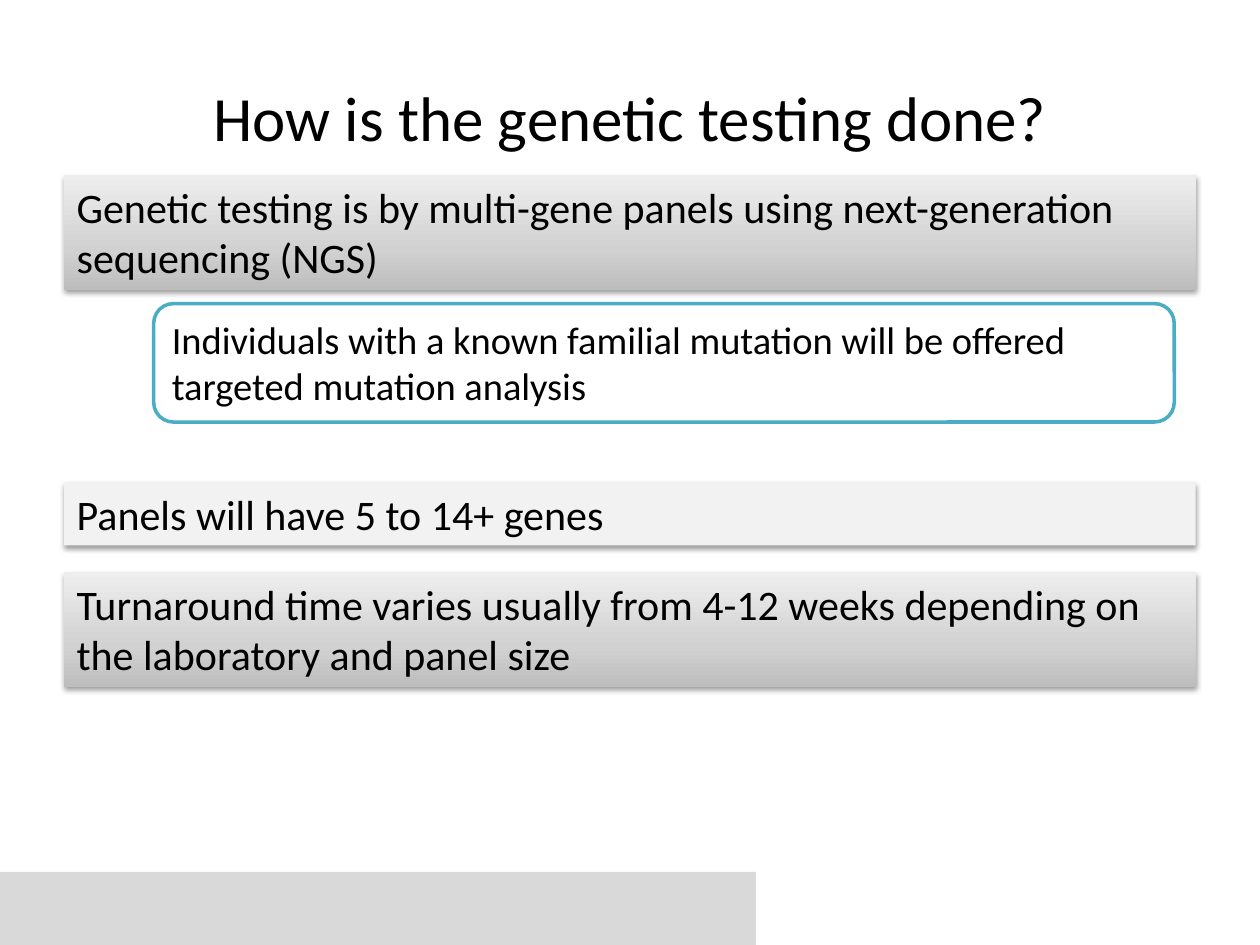
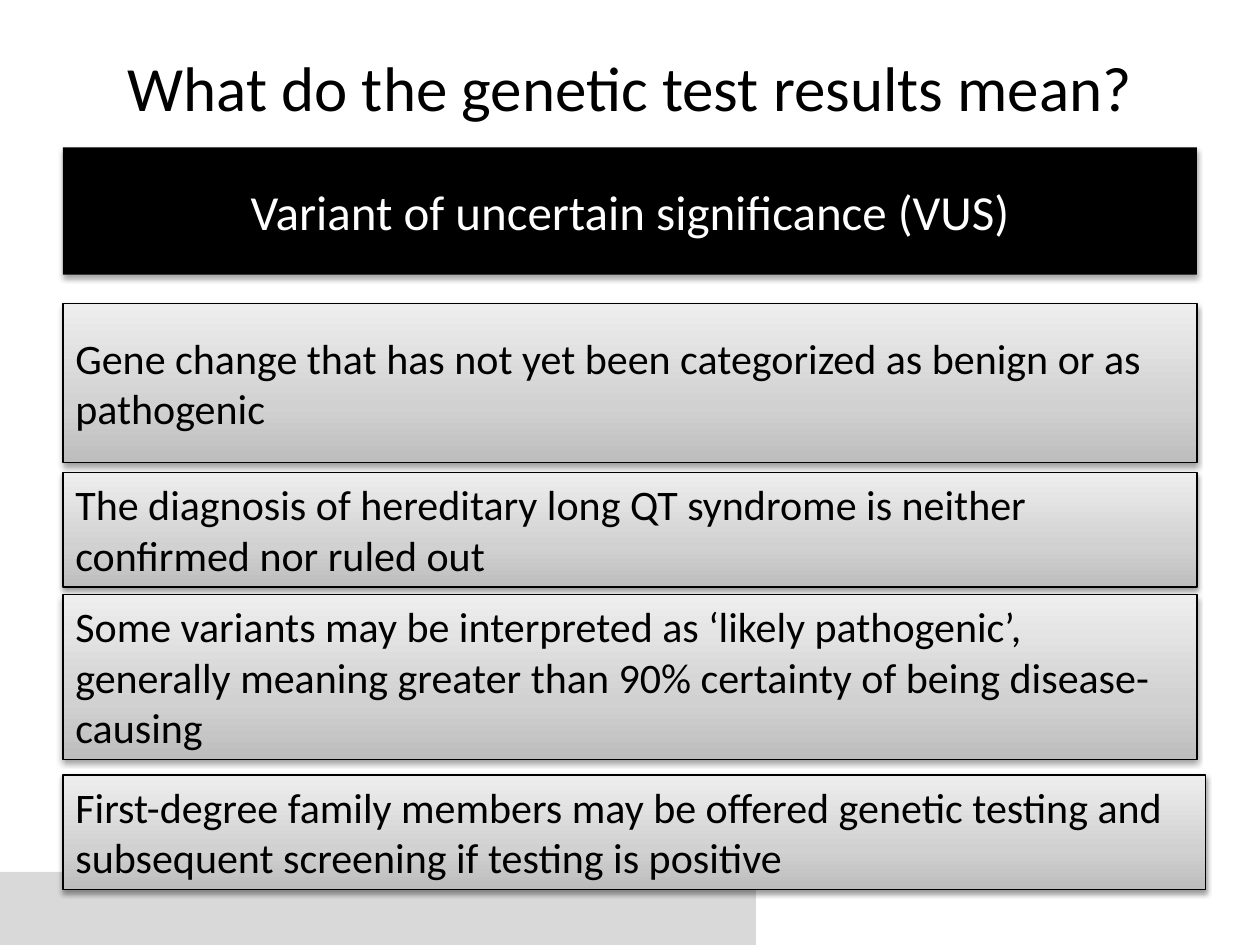
from copy import deepcopy
from dataclasses import dataclass
from typing import NamedTuple, Optional

from lxml import etree
from pptx import Presentation
from pptx import util as u
from pptx.dml.color import RGBColor
from pptx.enum import shapes, text
from pptx.oxml import ns

WIDE, HIGH = u.Inches(10), u.Inches(7.5)
COLS, ROWS = 20, 30


@dataclass(frozen=True)
class Theme:
    font: str = "Calibri"
    black: str = "000000"
    white: str = "FFFFFF"
    band: str = "D9D9D9"
    pale: str = "F2F2F2"
    teal: str = "4BACC6"
    fade: tuple = ((0, "BDBDBD"), (0.35, "D1D1D1"), (1, "EEEEEE"))
    title: int = 36
    head: int = 28
    body: int = 24
    note: int = 22


T = Theme()


class Area(NamedTuple):
    """Left, top, width and height in grid columns and rows."""
    col: float
    row: float
    cols: float
    rows: float

    def place(self) -> tuple:
        x, y = WIDE / COLS, HIGH / ROWS
        return tuple(round(n) for n in
                     (self.col * x, self.row * y, self.cols * x, self.rows * y))


class Shade(NamedTuple):
    alpha: int
    blur: float
    drop: float


SOFT = Shade(38, 3.1, 1.6)
DEEP = Shade(35, 3.1, 1.8)


@dataclass(frozen=True)
class Panel:
    area: Area
    words: str = ""
    fill: Optional[str] = None  # None gives the grey fade
    line: Optional[str] = None
    weight: float = 0.75
    size: int = T.body
    ink: str = T.black
    shade: Optional[Shade] = SOFT
    mid: bool = False
    center: bool = False
    round: bool = False


class Page(NamedTuple):
    title: str
    row: float
    panels: list


BAND = Panel(Area(0, 27.68, 12, 2.32), fill=T.band, shade=None)


def rgb(code: str) -> RGBColor:
    return RGBColor.from_string(code)


def fade(shape) -> None:
    fill = shape.fill
    fill.gradient()
    fill.gradient_angle = 90
    stops = shape._element.spPr.find(".//" + ns.qn("a:gsLst"))
    stops.append(deepcopy(stops[-1]))
    for stop, (spot, code) in zip(fill.gradient_stops, T.fade):
        stop.position = spot
        stop.color.rgb = rgb(code)


def cast(shape, shade: Shade) -> None:
    """Put an outer shadow straight below the shape."""
    effects = shape._element.spPr.find(ns.qn("a:effectLst"))
    outer = etree.SubElement(
        effects, ns.qn("a:outerShdw"), blurRad=str(u.Pt(shade.blur)),
        dist=str(u.Pt(shade.drop)), dir="5400000", rotWithShape="0")
    color = etree.SubElement(outer, ns.qn("a:srgbClr"), val=T.black)
    etree.SubElement(color, ns.qn("a:alpha"), val=str(shade.alpha * 1000))


def write(shape, words: str, size: int, ink: str, mid: bool, center: bool) -> None:
    frame = shape.text_frame
    frame.word_wrap = True
    frame.vertical_anchor = text.MSO_ANCHOR.MIDDLE if mid else text.MSO_ANCHOR.TOP
    frame.auto_size = (text.MSO_AUTO_SIZE.NONE if mid
                       else text.MSO_AUTO_SIZE.SHAPE_TO_FIT_TEXT)
    para = frame.paragraphs[0]
    para.alignment = text.PP_ALIGN.CENTER if center else text.PP_ALIGN.LEFT
    run = para.add_run()
    run.text = words
    run.font.name, run.font.size = T.font, u.Pt(size)
    run.font.color.rgb = rgb(ink)


def draw(slide, panel: Panel) -> None:
    kinds = shapes.MSO_SHAPE
    kind = kinds.ROUNDED_RECTANGLE if panel.round else kinds.RECTANGLE
    shape = slide.shapes.add_shape(kind, *panel.area.place())
    if panel.fill:
        shape.fill.solid()
        shape.fill.fore_color.rgb = rgb(panel.fill)
    else:
        fade(shape)
    if panel.line:
        shape.line.color.rgb = rgb(panel.line)
        shape.line.width = u.Pt(panel.weight)
    else:
        shape.line.fill.background()
    shape.shadow.inherit = False
    if panel.shade:
        cast(shape, panel.shade)
    if panel.words:
        write(shape, panel.words, panel.size, panel.ink, panel.mid, panel.center)


def build(deck, page: Page) -> None:
    slide = deck.slides.add_slide(deck.slide_layouts[6])
    draw(slide, BAND)
    box = slide.shapes.add_textbox(*Area(1, page.row, 18, 5).place())
    write(box, page.title, T.title, T.black, mid=True, center=True)
    for panel in page.panels:
        draw(slide, panel)


def plain(row: float, rows: float, words: str, fill: Optional[str] = None) -> Panel:
    return Panel(Area(1.02, row, 17.96, rows), words, fill)


def lined(row: float, rows: float, words: str, cols: float = 18,
          mid: bool = False) -> Panel:
    return Panel(Area(1, row, cols, rows), words, line=T.black, mid=mid)


PAGES = [
    Page("How is the genetic testing done?", 1.2, [
        plain(5.56, 3.64, "Genetic testing is by multi-gene panels using "
              "next-generation sequencing (NGS)"),
        Panel(Area(2.44, 9.64, 16.2, 3.76),
              "Individuals with a known familial mutation will be offered "
              "targeted mutation analysis",
              fill=T.white, line=T.teal, weight=2, size=T.note,
              shade=None, round=True),
        plain(15.32, 2, "Panels will have 5 to 14+ genes", T.pale),
        plain(18.16, 3.64, "Turnaround time varies usually from 4-12 weeks "
              "depending on the laboratory and panel size"),
    ]),
    Page("What do the genetic test results mean?", 0.24, [
        Panel(Area(1, 4.68, 18, 4.04), "Variant of uncertain significance (VUS)",
              fill=T.black, size=T.head, ink=T.white, shade=DEEP,
              mid=True, center=True),
        lined(9.64, 5.04, "Gene change that has not yet been categorized as "
              "benign or as pathogenic", mid=True),
        lined(15, 3.64, "The diagnosis of hereditary long QT syndrome is "
              "neither confirmed nor ruled out"),
        lined(18.88, 5.24, "Some variants may be interpreted as ‘likely "
              "pathogenic’, generally meaning greater than 90% certainty of "
              "being disease-causing"),
        lined(24.6, 3.64, "First-degree family members may be offered genetic "
              "testing and subsequent screening if testing is positive",
              cols=18.14),
    ]),
]


def main() -> None:
    deck = Presentation()
    deck.slide_width, deck.slide_height = WIDE, HIGH
    for page in PAGES:
        build(deck, page)
    deck.save("out.pptx")


if __name__ == "__main__":
    main()
